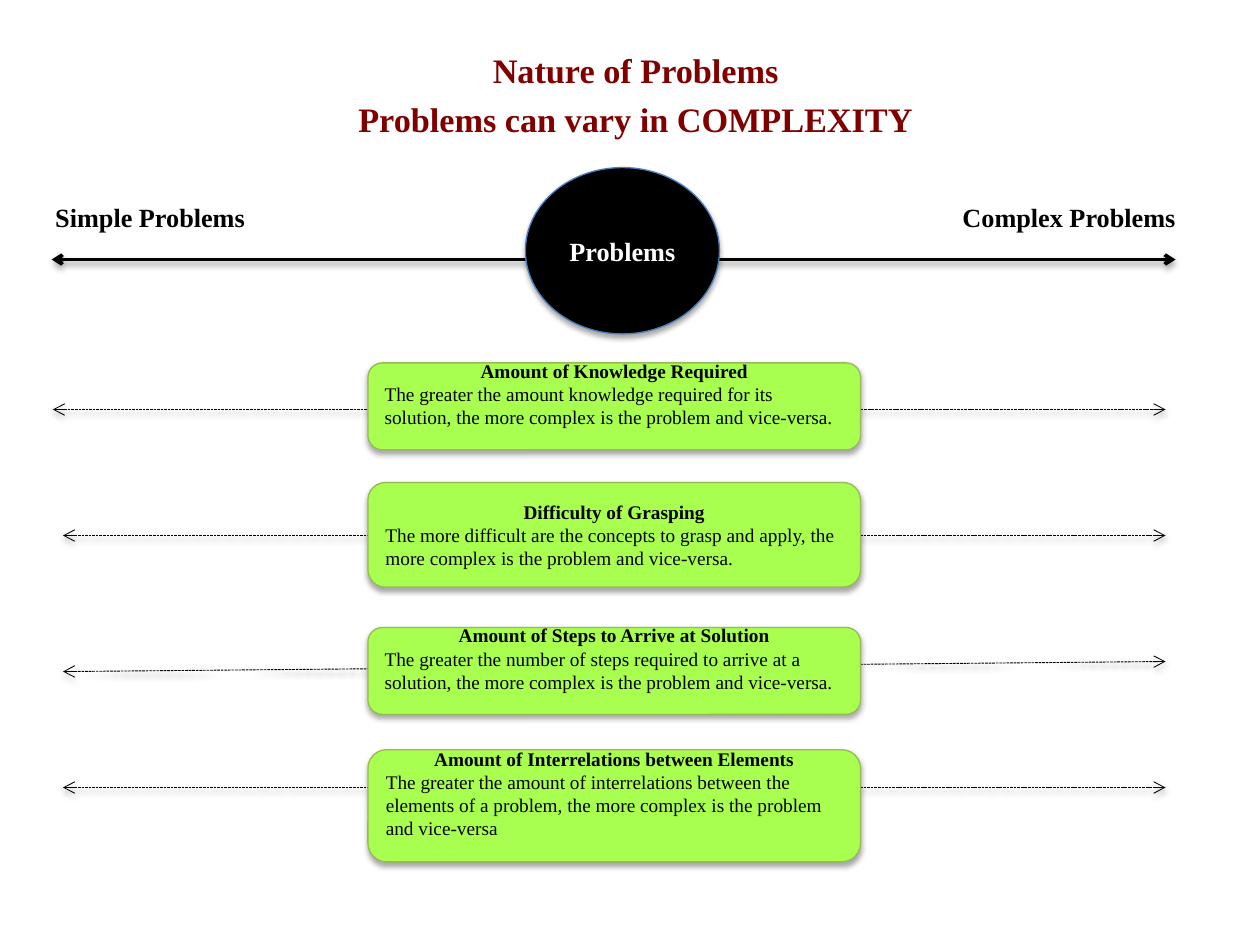
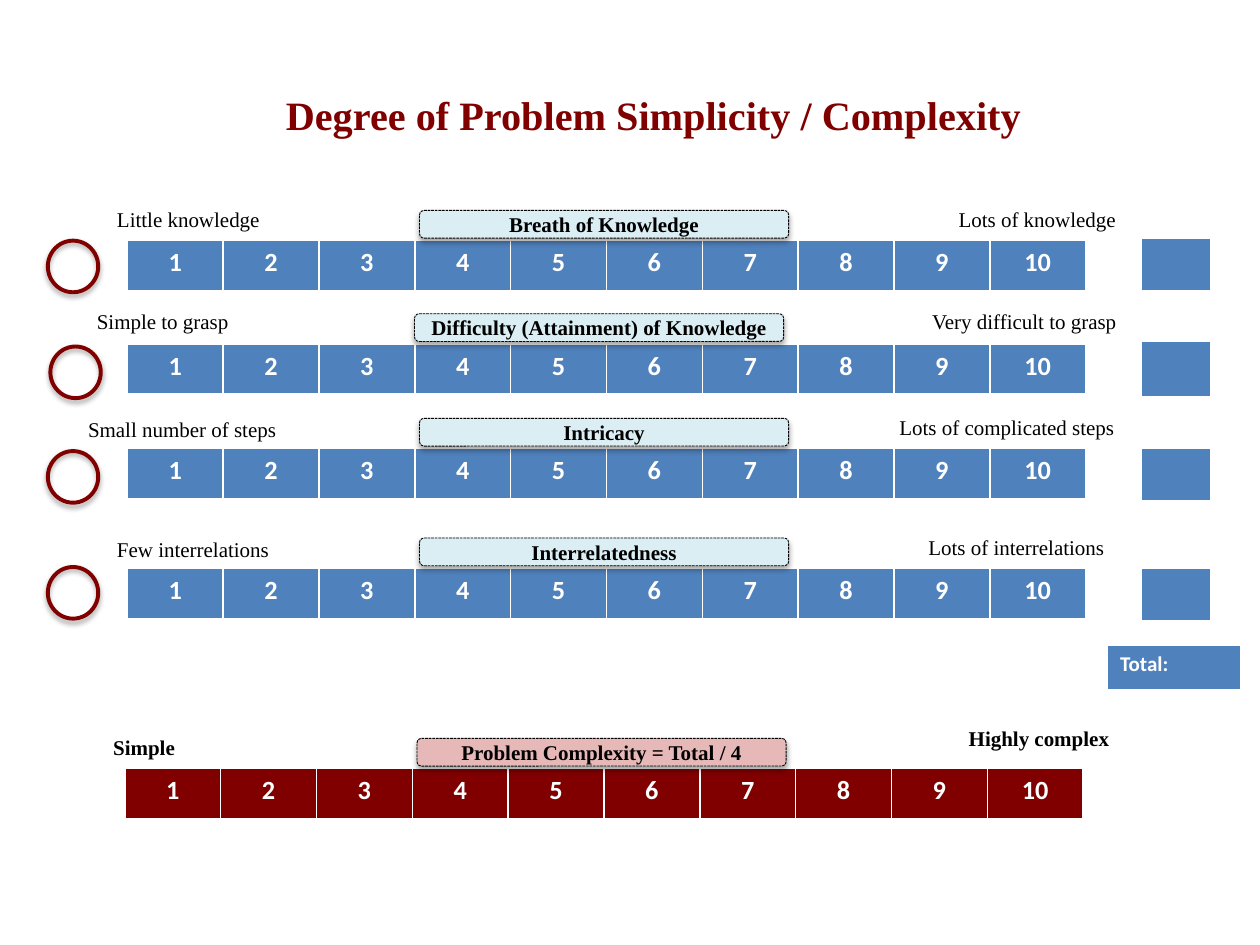
from lxml import etree
from pptx import Presentation
from pptx.dml.color import RGBColor
from pptx.enum import dml, shapes, text
from pptx.oxml.ns import qn
from pptx.util import Inches, Pt

BLACK = RGBColor(0x00, 0x00, 0x00)
WHITE = RGBColor(0xFF, 0xFF, 0xFF)
MAROON = RGBColor(0x80, 0x00, 0x00)
BLUE = RGBColor(0x4F, 0x81, 0xBD)
BLUE_EDGE = RGBColor(0x4B, 0x7E, 0xBC)
LIME = RGBColor(0xA8, 0xFF, 0x50)
LIME_EDGE = RGBColor(0x98, 0xB9, 0x55)
PALE_BLUE = RGBColor(0xDB, 0xEE, 0xF4)
PINK = RGBColor(0xE6, 0xB9, 0xB8)

SERIF, SANS = "Times New Roman", "Calibri"
LEFT, CENTER = text.PP_ALIGN.LEFT, text.PP_ALIGN.CENTER
ELLIPSE, ROUNDED = shapes.MSO_SHAPE.OVAL, shapes.MSO_SHAPE.ROUNDED_RECTANGLE
DASHED = dml.MSO_LINE.SQUARE_DOT
NAMESPACE = 'xmlns:a="http://schemas.openxmlformats.org/drawingml/2006/main"'
SHADOW = (f'<a:outerShdw {NAMESPACE} blurRad="39400" dist="22900" dir="5400000" '
          'rotWithShape="0"><a:srgbClr val="000000"><a:alpha val="35000"/>'
          '</a:srgbClr></a:outerShdw>')

deck = Presentation()
deck.slide_width, deck.slide_height = Inches(10), Inches(7.5)
COLUMN, ROW = deck.slide_width / 100, deck.slide_height / 75  # square grid


def add_box(page, place, lines=(), preset=None, fill=None, edge=None, width=0.75,
            dash=None, size=12, color=BLACK, bold=True, align=CENTER, wrap=True,
            margins=None):
    """Add a text box, or a shadowed shape when a preset is given."""
    x, y, w, h = place
    frame = [int(v) for v in (x * COLUMN, y * ROW, w * COLUMN, h * ROW)]
    if preset is None:
        box = page.shapes.add_textbox(*frame)
    else:
        box = page.shapes.add_shape(preset, *frame)
        if fill is None:
            box.fill.background()
        else:
            box.fill.solid()
            box.fill.fore_color.rgb = fill
        box.line.color.rgb, box.line.width = edge, Pt(width)
        box.line.dash_style = dash
        box.shadow.inherit = False
        effects = box._element.spPr.find(qn("a:effectLst"))
        effects.append(etree.fromstring(SHADOW))
        box.text_frame.vertical_anchor = text.MSO_ANCHOR.MIDDLE
    box.text_frame.word_wrap = wrap
    for side, value in (margins or {}).items():
        setattr(box.text_frame, f"margin_{side}", int(value * ROW))
    for number, line in enumerate(lines):
        body = box.text_frame
        para = body.add_paragraph() if number else body.paragraphs[0]
        para.alignment = align
        span = para.add_run()
        span.text = line
        span.font.color.rgb = color
        for name, value in dict(name=SERIF, size=Pt(size), bold=bold).items():
            setattr(span.font, name, value)
    return box


def add_cells(page, place, labels, fill, size=15, align=CENTER):
    """Add a one-row table of equal cells with white borders."""
    x, y, w, h = place
    frame = [int(v) for v in (x * COLUMN, y * ROW, w * COLUMN, h * ROW)]
    grid = page.shapes.add_table(1, len(labels), *frame).table
    grid.first_row = grid.horz_banding = False
    for cell, label in zip(grid.rows[0].cells, labels):
        borders = cell._tc.get_or_add_tcPr()
        for side, points in zip("LRTB", (1, 1, 1, 3)):
            borders.append(etree.fromstring(
                f'<a:ln{side} {NAMESPACE} w="{Pt(points)}"><a:solidFill>'
                f'<a:srgbClr val="{WHITE}"/></a:solidFill></a:ln{side}>'))
        cell.fill.solid()
        cell.fill.fore_color.rgb = fill
        if label:
            para = cell.text_frame.paragraphs[0]
            para.alignment = align
            span = para.add_run()
            span.text = label
            span.font.color.rgb = WHITE
            for name, value in dict(name=SANS, size=Pt(size), bold=True).items():
                setattr(span.font, name, value)


# Slide 1: title and the two ends of the range
page = deck.slides.add_slide(deck.slide_layouts[6])
title = add_box(page, (24.2, 3.4, 52.5, 7.9),
                ["Nature of Problems", "Problems can vary in COMPLEXITY"],
                size=19.6, color=MAROON)
title.text_frame.paragraphs[1].space_before = Pt(4.6)
for label, x, w in (("Simple Problems", 3.4, 17.3), ("Complex Problems", 75.4, 19.1)):
    add_box(page, (x, 15.5, w, 3.5), [label], size=15, align=LEFT, wrap=False)

# Double-headed arrows: x start, y start, x end, y end, width, dash
arrows = [
    (4.1, 20.6, 93.3, 20.6, 2, None),
    (4.2, 32.5, 92.5, 32.5, 0.5, DASHED),
    (5, 42.5, 92.5, 42.5, 0.5, DASHED),
    (5, 53.3, 92.5, 52.5, 0.5, DASHED),
    (5, 62.5, 92.5, 62.5, 0.5, DASHED),
]
for x1, y1, x2, y2, width, dash in arrows:
    arrow = page.shapes.add_connector(
        shapes.MSO_CONNECTOR.STRAIGHT,
        int(x1 * COLUMN), int(y1 * ROW), int(x2 * COLUMN), int(y2 * ROW))
    arrow.line.color.rgb, arrow.line.width = BLACK, Pt(width)
    arrow.line.dash_style = dash
    properties = arrow._element.spPr
    for end in ("headEnd", "tailEnd"):
        etree.SubElement(properties.find(qn("a:ln")), qn(f"a:{end}"), type="arrow")
    effects = etree.SubElement(properties, qn("a:effectLst"))
    effects.append(etree.fromstring(SHADOW))

add_box(page, (41.7, 13.3, 15.4, 13.2), ["Problems"], ELLIPSE, BLACK, BLUE_EDGE,
        size=15, color=WHITE)

# Factors: top, height, bottom margin, heading, explanation
factors = [
    (28.8, 6.9, 2, "Amount of Knowledge Required",
     "The greater the amount knowledge required for its solution, "
     "the more complex is the problem and vice-versa."),
    (38.3, 8.3, 0, "Difficulty of Grasping",
     "The more difficult are the concepts to grasp and apply, "
     "the more complex is the problem and vice-versa."),
    (49.8, 6.9, 2, "Amount of Steps to Arrive at Solution",
     "The greater the number of steps required to arrive at a solution, "
     "the more complex is the problem and vice-versa."),
    (59.5, 8.9, 2, "Amount of Interrelations between Elements",
     "The greater the amount of interrelations between the elements of a problem, "
     "the more complex is the problem and vice-versa"),
]
for y, h, bottom, heading, explanation in factors:
    factor = add_box(page, (29.2, y, 39.1, h), [heading, explanation], ROUNDED,
                     LIME, LIME_EDGE, size=11, margins=dict(top=0, bottom=bottom))
    detail = factor.text_frame.paragraphs[1]
    detail.alignment = LEFT
    detail.runs[0].font.bold = False

# Slide 2: title
page = deck.slides.add_slide(deck.slide_layouts[6])
add_box(page, (21.7, 6.7, 61.1, 4.9), ["Degree of Problem Simplicity / Complexity"],
        size=23, color=MAROON, align=LEFT, wrap=False)

# Scales: left and top of the cells, fill, caption, its left and fill,
# then left, top, width and wording of both end labels
scales = [
    (10.1, 19.1, BLUE, "Breath of Knowledge", 33.3, PALE_BLUE,
     (8.3, 15.9, 13.5, "Little knowledge"),
     (75.1, 15.9, 14.6, "Lots of knowledge")),
    (10.1, 27.3, BLUE, "Difficulty (Attainment) of Knowledge", 32.9, PALE_BLUE,
     (6.7, 24, 12.6, "Simple to grasp"),
     (73, 24, 16.7, "Very difficult to grasp")),
    (10.1, 35.6, BLUE, "Intricacy", 33.3, PALE_BLUE,
     (6, 32.6, 17.1, "Small number of steps"),
     (70.4, 32.4, 19.3, "Lots of complicated steps")),
    (10.1, 45.1, BLUE, "Interrelatedness", 33.3, PALE_BLUE,
     (8.3, 42.1, 14.2, "Few interrelations"),
     (72.7, 41.9, 16.6, "Lots of interrelations")),
    (9.9, 61, MAROON, "Problem Complexity = Total / 4", 33.1, PINK,
     (8, 57.8, 7, "Simple"),
     (75.9, 57.1, 13.3, "Highly complex")),
]
numbers = [str(n) for n in range(1, 11)]
for x, y, fill, caption, caption_x, caption_fill, *ends in scales:
    add_cells(page, (x, y, 76.1, 4.1), numbers, fill)
    add_box(page, (caption_x, y - 2.4, 29.3, 2.2), [caption], ROUNDED, caption_fill,
            BLACK, 0.5, DASHED, margins=dict(top=0, bottom=0))
    for end_x, end_y, w, label in ends:
        add_box(page, (end_x, end_y, w, 3), [label], bold=fill == MAROON,
                align=LEFT, wrap=False)

# Score cells and total
for y, h in ((18.9, 4.3), (27.1, 4.5), (35.6, 4.3), (45.1, 4.3)):
    add_cells(page, (90.6, y, 5.5, h), [""], BLUE)
add_cells(page, (87.9, 51.2, 10.6, 3.7), ["Total:"], BLUE, size=12, align=LEFT)

# Rings beside the scales
for x, y in ((3.8, 19.1), (4, 27.5), (3.8, 35.8), (3.8, 45)):
    add_box(page, (x, y, 4, 4.1), preset=ELLIPSE, edge=MAROON, width=2.25)

deck.save("out.pptx")
